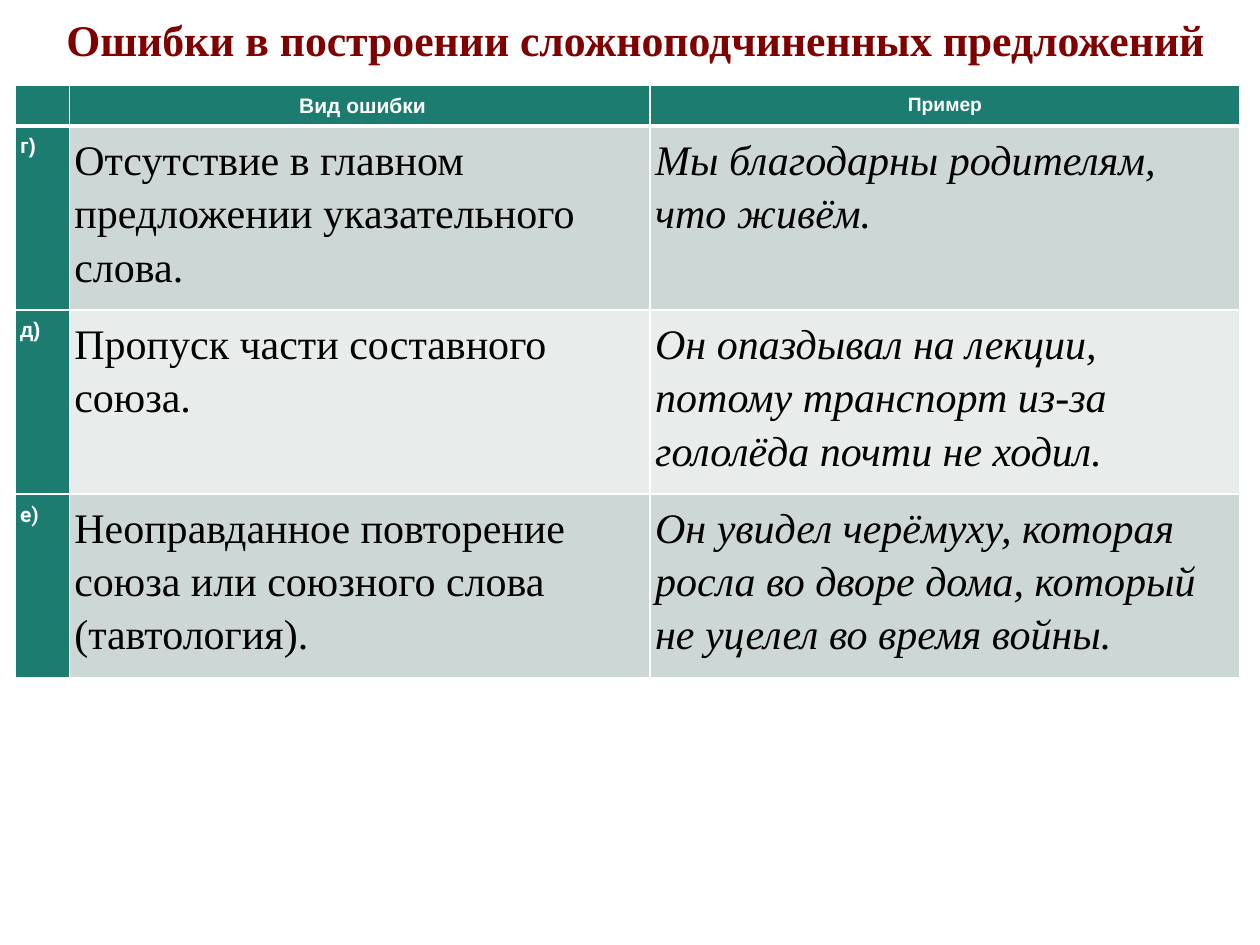
from lxml import etree
from pptx import Presentation
from pptx.dml.color import RGBColor
from pptx.enum.text import MSO_ANCHOR, PP_ALIGN
from pptx.oxml.ns import qn
from pptx.util import Inches, Pt

CENTER, LEFT = PP_ALIGN.CENTER, PP_ALIGN.LEFT
TOP = MSO_ANCHOR.TOP
COLORS = {
    "title": "800000",
    "accent": "1C7C70",
    "band_dark": "CDD7D5",
    "band_light": "E8ECEB",
    "white": "FFFFFF",
    "black": "000000",
}
SERIF, SANS = "Times New Roman", "Arial"
COLUMN_WIDTHS = [0.43, 4.61, 4.68]
HEADER_HEIGHT, ROW_HEIGHT = 0.32, 1.46
HEADERS = [("", 12), ("\u00a0Вид ошибки", 12), ("Пример", 11)]
ERRORS = [
    ("г)", SANS, "Отсутствие в главном предложении указательного слова.\u00a0",
     "Мы благодарны родителям, что живём.\u00a0"),
    ("д)", SANS, "Пропуск части составного союза.\u00a0",
     "Он опаздывал на лекции, потому транспорт из-за гололёда почти не ходил.\u00a0"),
    ("е)", "Roboto", "Неоправданное повторение союза или союзного слова (тавтология).\u00a0",
     "Он увидел черёмуху, которая росла во дворе дома, который не уцелел во время войны.\u00a0"),
]


def color(name):
    return RGBColor.from_string(COLORS[name])


def format_text(para, align, font_name, size, color_name, bold=False, italic=False):
    para.alignment = align
    for span in para.runs:
        font = span.font
        font.name, font.size = font_name, Pt(size)
        font.bold, font.italic = bold, italic
        font.color.rgb = color(color_name)


def set_borders(cell, bottom_width):
    properties = cell._tc.get_or_add_tcPr()
    widths = {"a:lnL": 1, "a:lnR": 1, "a:lnT": 1, "a:lnB": bottom_width}
    for position, (tag, width) in enumerate(widths.items()):
        line = etree.Element(qn(tag), w=str(Pt(width)))
        fill = etree.SubElement(line, qn("a:solidFill"))
        etree.SubElement(fill, qn("a:srgbClr"), val=COLORS["white"])
        properties.insert(position, line)


def fill_cell(cell, text, fill, align, font_name, size, color_name,
              bold=False, italic=False, bottom_width=1):
    cell.fill.solid()
    cell.fill.fore_color.rgb = color(fill)
    cell.vertical_anchor = TOP
    cell.margin_left = cell.margin_right = Inches(0.04)
    cell.margin_top = cell.margin_bottom = Inches(0.04 if text else 0)
    set_borders(cell, bottom_width)
    if text:
        cell.text_frame.text = text
        para = cell.text_frame.paragraphs[0]
        para.line_spacing = 1.15
        format_text(para, align, font_name, size, color_name, bold, italic)


def add_title(page, left, top, width, height):
    box = page.shapes.add_textbox(Inches(left), Inches(top), Inches(width), Inches(height))
    box.text_frame.word_wrap = True
    box.text_frame.text = " Ошибки в построении сложноподчиненных предложений"
    format_text(box.text_frame.paragraphs[0], CENTER, SERIF, 25, "title", bold=True)


def add_error_table(page, left, top, width, height):
    frame = page.shapes.add_table(len(ERRORS) + 1, len(HEADERS), Inches(left),
                                  Inches(top), Inches(width), Inches(height))
    table = frame.table
    for column, column_width in zip(table.columns, COLUMN_WIDTHS):
        column.width = Inches(column_width)
    for index, row in enumerate(table.rows):
        row.height = Inches(ROW_HEIGHT if index else HEADER_HEIGHT)

    for index, (text, size) in enumerate(HEADERS):
        fill_cell(table.cell(0, index), text, "accent", CENTER, SANS, size, "white",
                  bold=True, bottom_width=3)
    for index, (label, label_font, error, example) in enumerate(ERRORS, start=1):
        band = "band_dark" if index % 2 else "band_light"
        fill_cell(table.cell(index, 0), label, "accent", LEFT, label_font, 12, "white", bold=True)
        fill_cell(table.cell(index, 1), error, band, LEFT, SERIF, 24, "black")
        fill_cell(table.cell(index, 2), example, band, LEFT, SERIF, 24, "black", italic=True)


def main():
    deck = Presentation()
    deck.slide_width, deck.slide_height = Inches(10), Inches(7.5)
    page = deck.slides.add_slide(deck.slide_layouts[6])
    page.background.fill.solid()
    page.background.fill.fore_color.rgb = color("white")
    add_title(page, 0.12, 0.05, 9.76, 0.52)
    add_error_table(page, 0.12, 0.68, 9.72, 4.7)
    deck.save("out.pptx")


if __name__ == "__main__":
    main()
